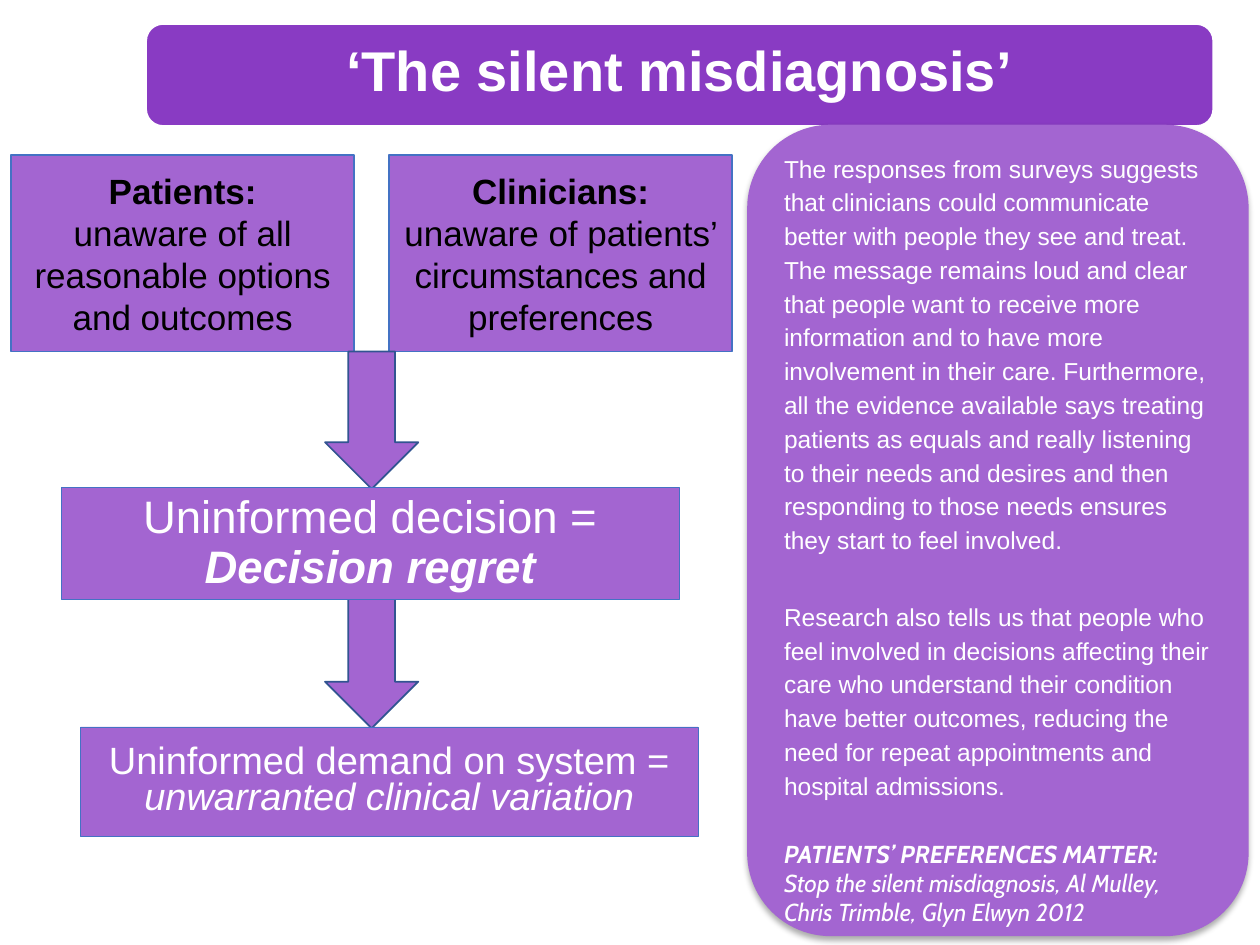
from lxml import etree
from pptx import Presentation
from pptx.dml.color import RGBColor as RGB
from pptx.enum.shapes import MSO_SHAPE as Geo
from pptx.enum.text import MSO_ANCHOR as Anc, PP_ALIGN as Al
from pptx.oxml.ns import qn
from pptx.util import Inches, Pt

LILAC = RGB(0xA3, 0x65, 0xD1)
PURPLE = RGB(0x89, 0x3B, 0xC3)
BLUE = RGB(0x44, 0x72, 0xC4)
NAVY = RGB(0x32, 0x54, 0x91)
WHITE = RGB(0xFF, 0xFF, 0xFF)
BLACK = RGB(0, 0, 0)


def add_box(slide, geo, box, fill=LILAC, line=None, width=1):
    """Add a flat filled shape, outlined when a line colour is given."""
    shape = slide.shapes.add_shape(geo, *map(Inches, box))
    shape.shadow.inherit = False
    shape.fill.solid()
    shape.fill.fore_color.rgb = fill
    if line is None:
        shape.line.fill.background()
    else:
        shape.line.color.rgb = line
        shape.line.width = Pt(width)
    frame = shape.text_frame
    frame.word_wrap = True
    frame.vertical_anchor = Anc.MIDDLE
    return shape


def add_text(frame, rows, size, color, align=Al.CENTER, pitch=None):
    """Fill a frame with rows of text, bold, italic, font, space and pitch."""
    for i, (text, bold, italic, *more) in enumerate(rows):
        para = frame.paragraphs[0] if i == 0 else frame.add_paragraph()
        font, gap, own = more or ("Arial", 0, pitch)
        para.alignment = align
        para.space_before = Pt(gap)
        if own:
            para.line_spacing = own
        run = para.add_run()
        run.text = text
        run.font.name = font
        run.font.size = Pt(size)
        run.font.bold = bold
        run.font.italic = italic
        run.font.color.rgb = color


def add_title(slide, box):
    """Place the title banner."""
    shape = add_box(slide, Geo.ROUNDED_RECTANGLE, box, PURPLE, WHITE)
    shape.text_frame.vertical_anchor = Anc.TOP
    add_text(shape.text_frame, [("‘The silent misdiagnosis’", True, False)], 32, WHITE)


def add_flow(slide, box):
    """Place the two causes, the two arrows and the two results."""
    left, top, wide, high = box
    causes = [
        ("Patients:", "unaware of all reasonable options and outcomes"),
        ("Clinicians:", "unaware of patients’ circumstances and preferences"),
    ]
    card = 2.72
    for i, (head, body) in enumerate(causes):
        spot = (left + i * (wide - card), top, card, 1.56)
        shape = add_box(slide, Geo.RECTANGLE, spot, line=BLUE)
        add_text(shape.text_frame, [(head, True, False), (body, False, False)], 20, BLACK)
    for drop in (1.56, 3.46):
        spot = (left + 2.49, top + drop, 0.74, 1.09)
        add_box(slide, Geo.DOWN_ARROW, spot, line=NAVY)
    results = [
        (0.4, 2.64, 0.89, 26, 0.9, "Uninformed decision =", "Decision regret", True),
        (0.55, high - 0.87, 0.87, 21.7, 0.8, "Uninformed demand on system =",
         "unwarranted clinical variation", False),
    ]
    for shift, drop, tall, size, pitch, head, body, bold in results:
        spot = (left + shift, top + drop, 4.9, tall)
        shape = add_box(slide, Geo.RECTANGLE, spot, line=BLUE, width=0.5)
        rows = [(head, False, False), (body, bold, True)]
        add_text(shape.text_frame, rows, size, WHITE, pitch=pitch)


def add_shadow(shape):
    """Give a shape a soft shadow below it."""
    props = shape._element.spPr
    list_el = props.find(qn("a:effectLst"))
    outer = etree.SubElement(list_el, qn("a:outerShdw"), blurRad=str(Pt(3.5)),
                             dist=str(Pt(2.2)), dir="5400000", rotWithShape="0")
    color = etree.SubElement(outer, qn("a:srgbClr"), val=str(BLACK))
    etree.SubElement(color, qn("a:alpha"), val="32000")


def add_panel(slide, box):
    """Place the evidence panel with its citation."""
    shape = add_box(slide, Geo.ROUNDED_RECTANGLE, box)
    add_shadow(shape)
    frame = shape.text_frame
    frame.vertical_anchor = Anc.TOP
    frame.margin_top = frame.margin_bottom = 0
    rows = [
        ("The responses from surveys suggests that clinicians could communicate better "
         "with people they see and treat. The message remains loud and clear that people "
         "want to receive more information and to have more involvement in their care. "
         "Furthermore, all the evidence available says treating patients as equals and "
         "really listening to their needs and desires and then responding to those needs "
         "ensures they start to feel involved.", False, False, "Arial", 0, 1.15),
        ("Research also tells us that people who feel involved in decisions affecting "
         "their care who understand their condition have better outcomes, reducing the "
         "need for repeat appointments and hospital admissions.",
         False, False, "Arial", 24.5, 1.15),
        ("PATIENTS’ PREFERENCES MATTER:", True, True, "Cabin", 22, 1),
        ("Stop the silent misdiagnosis, Al Mulley, Chris Trimble, Glyn Elwyn 2012",
         False, True, "Cabin", 0, 1),
    ]
    add_text(frame, rows, 14, WHITE, Al.LEFT)


def main():
    """Build the slide and save it."""
    deck = Presentation()
    deck.slide_width, deck.slide_height = Inches(10), Inches(7.5)
    slide = deck.slides.add_slide(deck.slide_layouts[6])
    add_flow(slide, (0.09, 1.23, 5.72, 5.41))
    add_title(slide, (1.16, 0.19, 8.47, 0.81))
    add_panel(slide, (5.93, 0.99, 3.98, 6.44))
    deck.save("out.pptx")


if __name__ == "__main__":
    main()
